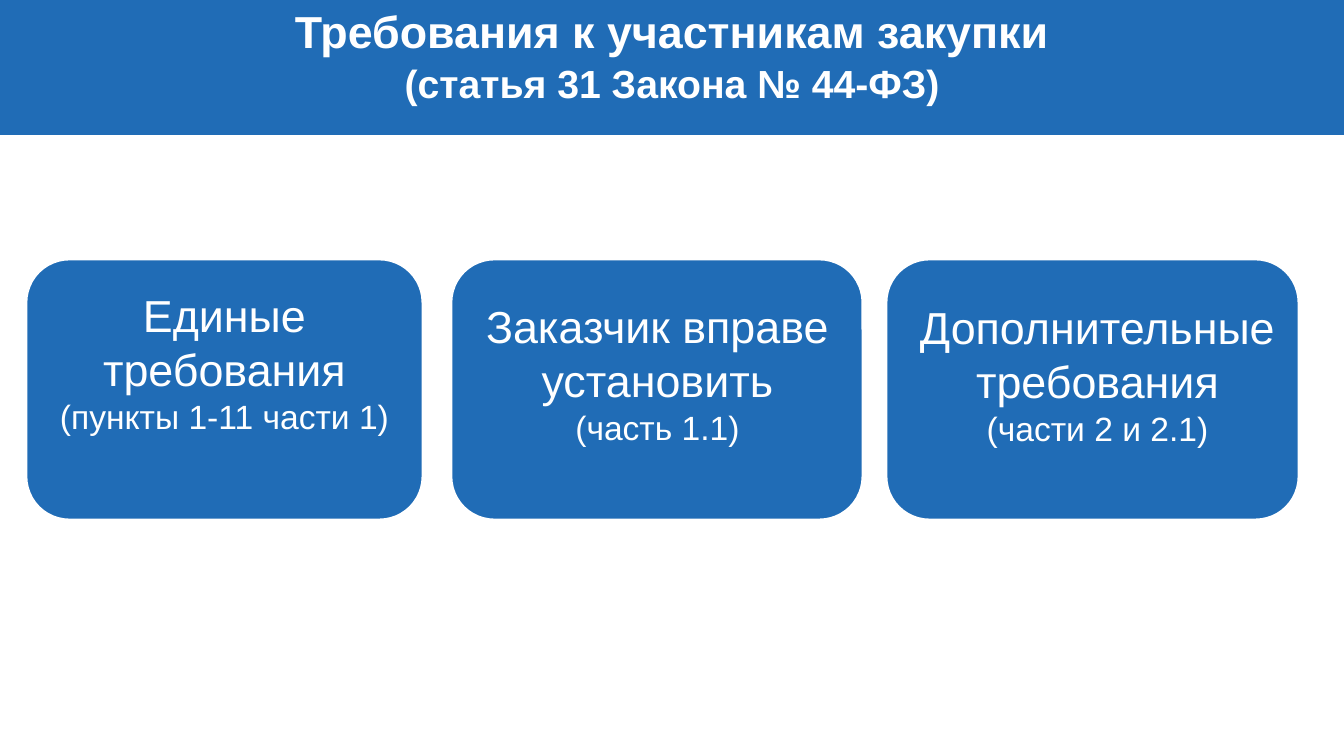
from pptx import Presentation
from pptx import util as u
from pptx.dml.color import RGBColor
from pptx.enum import shapes, text

BLUE = RGBColor(0x20, 0x6C, 0xB6)
WHITE = RGBColor(0xFF, 0xFF, 0xFF)
EMU_PER_PX = 914400 / 100.8


def px(*lengths):
    return [u.Emu(round(length * EMU_PER_PX)) for length in lengths]


class Slide:
    """Draws the elements of one slide in a shared style."""

    font = "Arial"

    def __init__(self, deck):
        self.page = deck.slides.add_slide(deck.slide_layouts[5])

    def style(self, para, size, bold=False):
        para.alignment = text.PP_ALIGN.CENTER
        for span in para.runs:
            span.font.name = self.font
            span.font.size = u.Pt(size)
            span.font.bold = bold
            span.font.color.rgb = WHITE

    def title(self, area, heading, subheading):
        box = self.page.shapes.title
        box.left, box.top, box.width, box.height = px(*area)
        box.fill.solid()
        box.fill.fore_color.rgb = BLUE
        frame = box.text_frame
        frame.word_wrap = True
        frame.auto_size = text.MSO_AUTO_SIZE.NONE
        frame.vertical_anchor = text.MSO_ANCHOR.TOP
        frame.margin_left = frame.margin_right = frame.margin_bottom = 0
        frame.margin_top = px(2)[0]
        frame.text = f"{heading}\v{subheading}"
        para = frame.paragraphs[0]
        para.line_spacing = 1.05
        self.style(para, 32, bold=True)
        para.runs[1].font.size = u.Pt(28)

    def card(self, area):
        box = self.page.shapes.add_shape(
            shapes.MSO_SHAPE.ROUNDED_RECTANGLE, *px(*area))
        box.shadow.inherit = False
        box.fill.solid()
        box.fill.fore_color.rgb = BLUE
        box.line.color.rgb = WHITE
        box.line.width = u.Pt(2)

    def caption(self, area, lines, note):
        box = self.page.shapes.add_textbox(*px(*area))
        frame = box.text_frame
        frame.word_wrap = True
        frame.auto_size = text.MSO_AUTO_SIZE.SHAPE_TO_FIT_TEXT
        frame.text = "\n".join([*lines, note])
        for para in frame.paragraphs:
            self.style(para, 32)
        self.style(frame.paragraphs[-1], 24)


def main():
    deck = Presentation()
    deck.slide_width, deck.slide_height = px(1344, 756)
    slide = Slide(deck)
    slide.title((0, -1, 1344, 136), "Требования к участникам закупки",
                "(статья 31 Закона № 44-ФЗ)")
    cards = [
        (26, 397, 17, 283, ["Единые требования"], "(пункты 1-11 части 1)"),
        (451, 412, 450, 294, ["Заказчик вправе установить"], "(часть 1.1)"),
        (886, 413, 890, 295, ["Дополнительные", "требования"],
         "(части 2 и 2.1)"),
    ]
    for left, width, text_left, text_top, lines, note in cards:
        slide.card((left, 259, width, 261))
        slide.caption((text_left, text_top, 415, 159), lines, note)
    deck.save("out.pptx")


if __name__ == "__main__":
    main()
